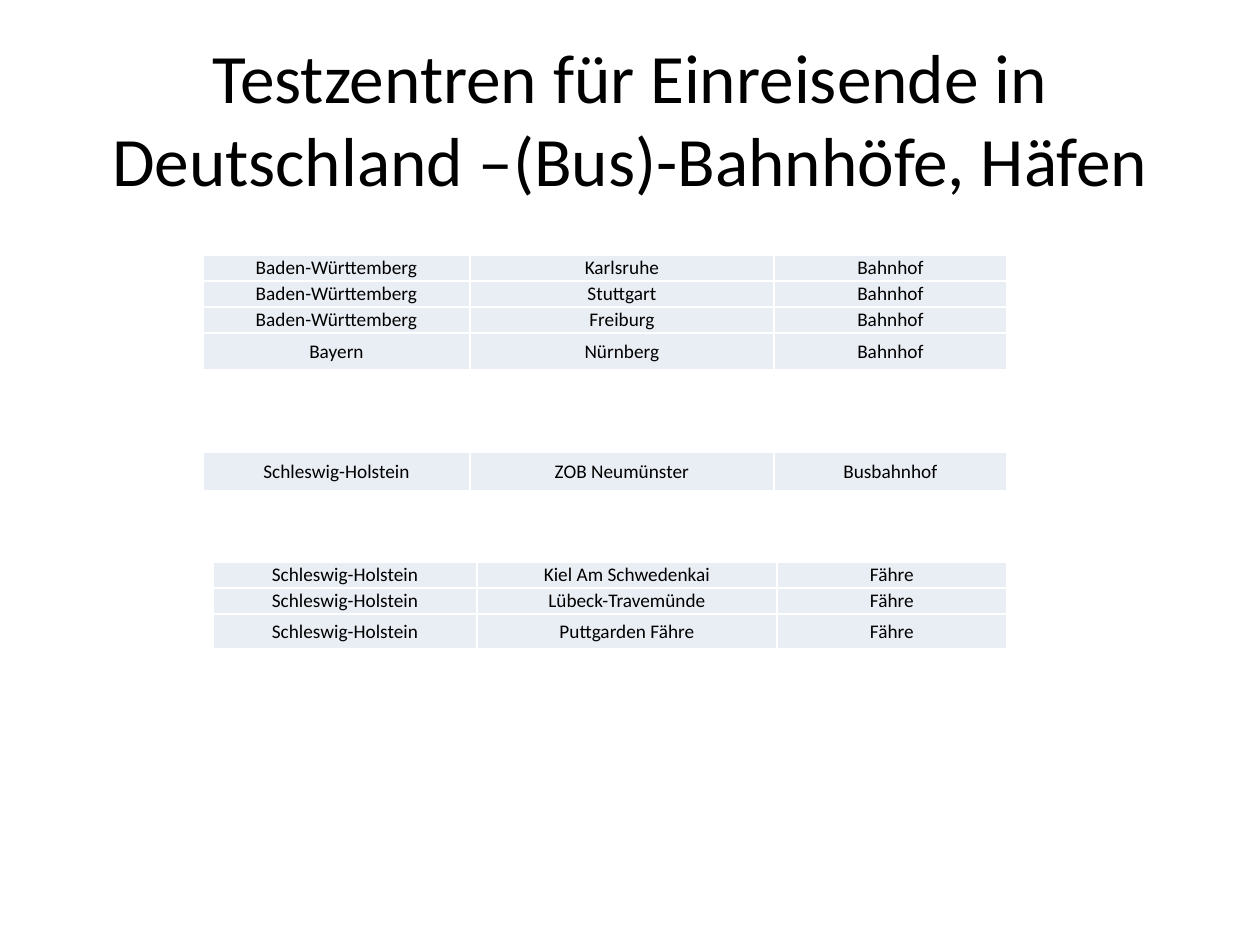
from dataclasses import dataclass

from pptx import Presentation
from pptx.dml.color import RGBColor
from pptx.enum.text import MSO_ANCHOR, PP_ALIGN
from pptx.util import Emu, Pt

MIDDLE = MSO_ANCHOR.MIDDLE
CENTER = PP_ALIGN.CENTER

PX_PER_INCH = 126
FONT = "Calibri"
BLACK = RGBColor(0x00, 0x00, 0x00)
CELL_FILL = RGBColor(0xE9, 0xED, 0xF4)

TITLE = "Testzentren für Einreisende in Deutschland –(Bus)-Bahnhöfe, Häfen"


@dataclass
class CentreTable:
    left: int
    top: int
    columns: tuple[int, ...]
    row_heights: tuple[int, ...]
    site_type: str
    sites: list[tuple[str, str]]  # federal state, place


WIDE_COLUMNS = (267, 304, 233)
STATIONS = CentreTable(203, 255, WIDE_COLUMNS, (26, 26, 26, 37), "Bahnhof", [
    ("Baden-Württemberg", "Karlsruhe"),
    ("Baden-Württemberg", "Stuttgart"),
    ("Baden-Württemberg", "Freiburg"),
    ("Bayern", "Nürnberg"),
])
BUS_STATIONS = CentreTable(203, 452, WIDE_COLUMNS, (39,), "Busbahnhof", [
    ("Schleswig-Holstein", "ZOB Neumünster"),
])
FERRIES = CentreTable(213, 562, (264, 300, 230), (26, 26, 35), "Fähre", [
    ("Schleswig-Holstein", "Kiel Am Schwedenkai"),
    ("Schleswig-Holstein", "Lübeck-Travemünde"),
    ("Schleswig-Holstein", "Puttgarden Fähre"),
])


def px(length: int) -> Emu:
    return Emu(round(length * 914400 / PX_PER_INCH))


def write(frame, text: str, size: float) -> None:
    paragraph = frame.paragraphs[0]
    paragraph.text = text
    paragraph.alignment = CENTER
    paragraph.font.name = FONT
    paragraph.font.size = Pt(size)
    paragraph.font.color.rgb = BLACK


def add_title(slide, text: str) -> None:
    frame = slide.shapes.add_textbox(px(63), px(38), px(1134), px(158)).text_frame
    frame.word_wrap = True
    frame.vertical_anchor = MIDDLE
    write(frame, text, 39.6)


def add_centres(slide, centres: CentreTable) -> None:
    table = slide.shapes.add_table(
        len(centres.sites), len(centres.columns), px(centres.left), px(centres.top),
        px(sum(centres.columns)), px(sum(centres.row_heights))).table
    # The default style supplies the thin white cell borders
    table.first_row = False
    table.horz_banding = False
    for column, width in zip(table.columns, centres.columns):
        column.width = px(width)
    for row, height, site in zip(table.rows, centres.row_heights, centres.sites):
        row.height = px(height)
        for cell, text in zip(row.cells, (*site, centres.site_type)):
            cell.margin_left = cell.margin_right = 0
            cell.margin_top = cell.margin_bottom = 0
            cell.vertical_anchor = MIDDLE
            cell.fill.solid()
            cell.fill.fore_color.rgb = CELL_FILL
            write(cell.text_frame, text, 11)


def main() -> None:
    prs = Presentation()
    prs.slide_width, prs.slide_height = px(1260), px(945)
    slide = prs.slides.add_slide(prs.slide_layouts[6])

    # Test centres by type of arrival
    for centres in (STATIONS, BUS_STATIONS, FERRIES):
        add_centres(slide, centres)

    # Heading
    add_title(slide, TITLE)
    prs.save("out.pptx")


if __name__ == "__main__":
    main()
